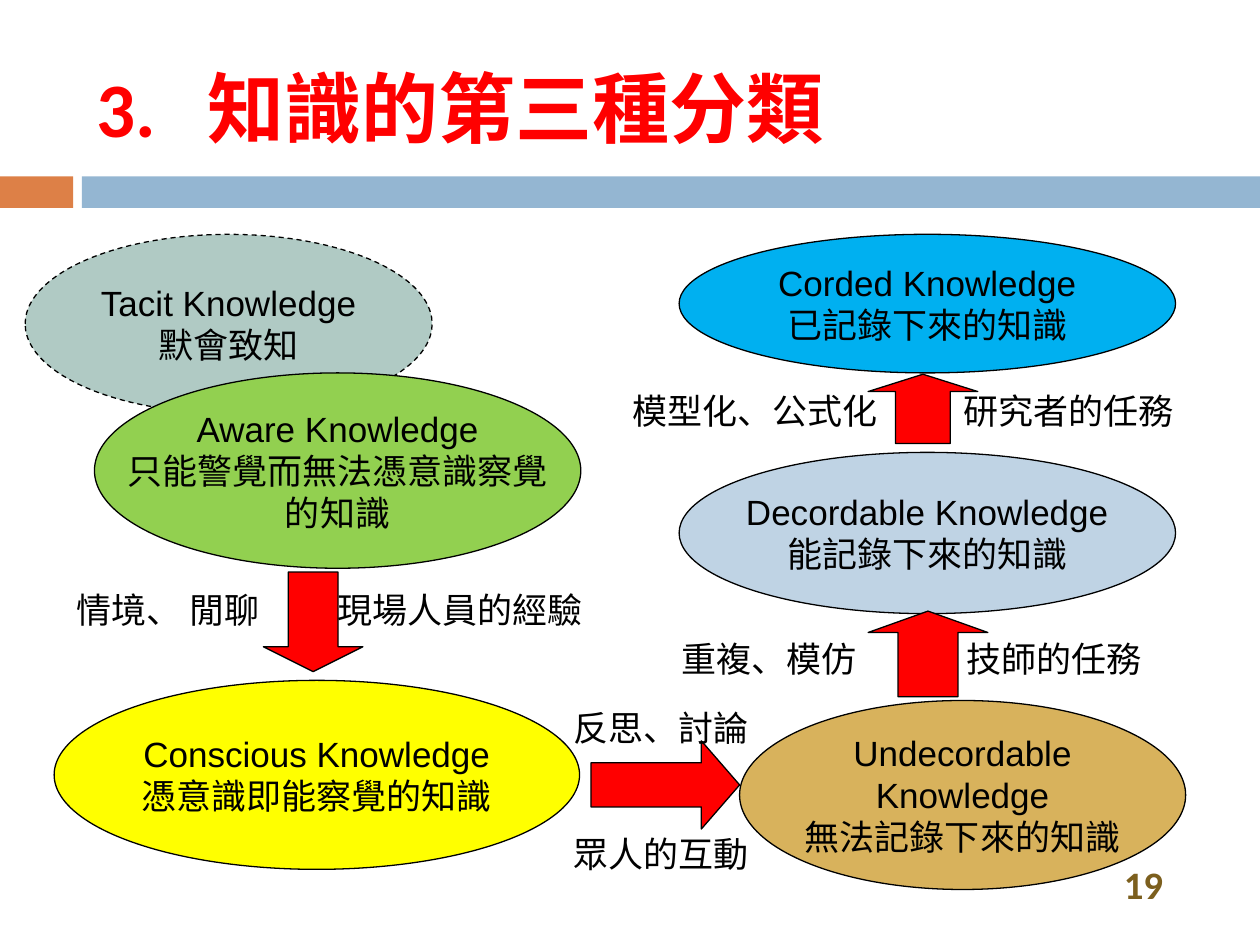
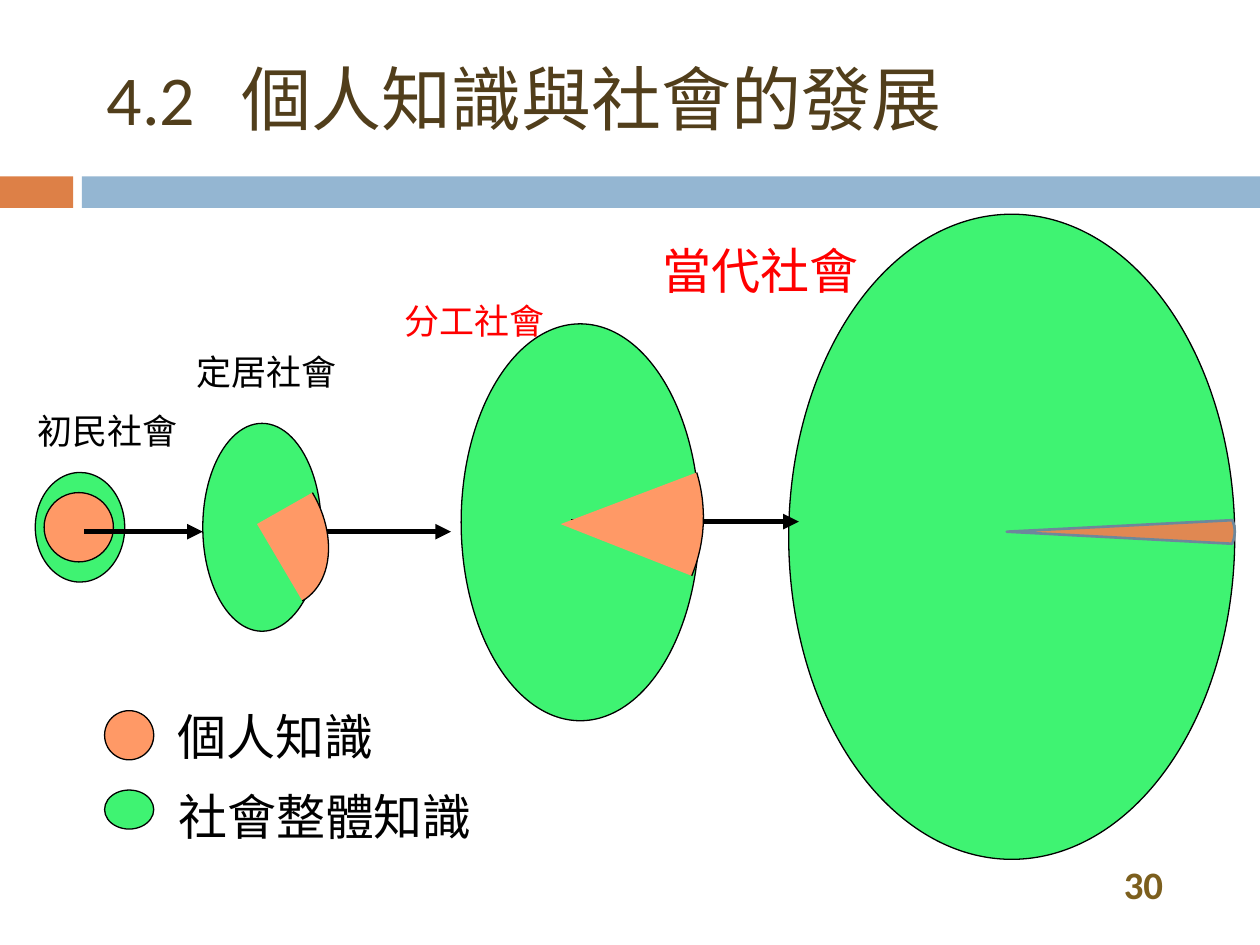
from lxml import etree
from pptx import Presentation
from pptx.dml.color import RGBColor
from pptx.enum.dml import MSO_LINE
from pptx.enum.shapes import MSO_CONNECTOR, MSO_SHAPE as Shape
from pptx.enum.text import MSO_ANCHOR as Anchor, PP_ALIGN as Align
from pptx.oxml.ns import qn
from pptx.util import Inches, Pt

# Colours and fonts
BLACK = RGBColor(0x00, 0x00, 0x00)
RED = RGBColor(0xFF, 0x00, 0x00)
ORANGE = RGBColor(0xDD, 0x80, 0x47)
BLUE = RGBColor(0x94, 0xB6, 0xD2)
BROWN = RGBColor(0x51, 0x3E, 0x1B)
PAGE_BROWN = RGBColor(0x7C, 0x5F, 0x1E)
SAGE = RGBColor(0xB0, 0xCA, 0xC4)
LEAF = RGBColor(0x92, 0xD0, 0x50)
YELLOW = RGBColor(0xFF, 0xFF, 0x00)
PALE_BLUE = RGBColor(0xBF, 0xD3, 0xE4)
SAND = RGBColor(0xD8, 0xB2, 0x5C)
SKY = RGBColor(0x00, 0xB0, 0xF0)
GREEN = RGBColor(0x3F, 0xF3, 0x72)
PEACH = RGBColor(0xFF, 0x99, 0x66)
SLICE_FILL = RGBColor(0xE0, 0x88, 0x52)
SLICE_LINE = RGBColor(0x6D, 0x87, 0x9B)
BODY_FONT, TITLE_FONT = "Arial", "Calibri"

# Shared frame: (box, colour)
BANDS = [((0, 1.4, 0.58, 0.25), ORANGE), ((0.65, 1.4, 9.35, 0.25), BLUE)]
PAGE_BOX = (8.62, 6.82, 0.71, 0.39)

# Slide 1: kinds of knowledge (box, colour, lines)
KNOWLEDGE = [
    ((0.2, 1.86, 3.23, 1.42), SAGE, ["Tacit Knowledge", "默會致知"]),
    ((0.75, 2.96, 3.86, 1.55), LEAF,
     ["Aware Knowledge", "只能警覺而無法憑意識察覺", "的知識"]),
    ((0.43, 5.4, 4.17, 1.5), YELLOW, ["Conscious Knowledge", "憑意識即能察覺的知識"]),
    ((5.39, 3.59, 3.94, 1.28), PALE_BLUE, ["Decordable Knowledge", "能記錄下來的知識"]),
    ((5.87, 5.56, 3.54, 1.5), SAND,
     ["Undecordable", "Knowledge", "無法記錄下來的知識"]),
    ((5.39, 1.86, 3.94, 1.1), SKY, ["Corded Knowledge", "已記錄下來的知識"]),
]
# (preset, box, head length)
STEP_ARROWS = [
    (Shape.DOWN_ARROW, (2.09, 4.54, 0.79, 0.79), 0.25),
    (Shape.RIGHT_ARROW, (4.69, 5.88, 1.18, 0.7), 0.434),
    (Shape.UP_ARROW, (6.89, 4.85, 0.95, 0.68), 0.25),
    (Shape.UP_ARROW, (6.89, 2.97, 0.87, 0.55), 0.25),
]
# (left, top, text)
STEP_LABELS = [
    (0.51, 4.62, "情境、 閒聊"), (2.58, 4.62, "現場人員的經驗"),
    (5.31, 5.01, "重複、模仿"), (7.57, 5.01, "技師的任務"),
    (4.45, 5.56, "反思、討論"), (4.45, 6.56, "眾人的互動"),
    (4.92, 3.04, "模型化、公式化"), (7.55, 3.04, "研究者的任務"),
]

# Slide 2: societies (ellipse box, label, label box, size, colour)
SOCIETIES = [
    ((0.28, 3.75, 0.71, 0.87), "初民社會", (0.2, 3.2, 1.31, 0.43), 20, BLACK),
    ((1.61, 3.36, 0.94, 1.65), "定居社會", (1.46, 2.73, 1.31, 0.43), 20, BLACK),
    ((3.66, 2.57, 1.89, 3.15), "分工社會", (3.11, 2.33, 1.31, 0.43), 20, RED),
    ((6.26, 1.7, 3.54, 5.12), "當代社會", (5.16, 1.86, 1.77, 0.57), 28, RED),
]
PERSONAL_CIRCLE = (0.35, 3.91, 0.55, 0.55)
# (start x, end x, y)
TIMELINE = [(0.67, 1.61, 4.22), (2.09, 3.58, 4.22), (4.53, 6.34, 4.14)]
# (tip, four control points of the outer curve)
WEDGES = [
    ((4.45, 4.16), [(5.53, 3.75), (5.61, 4.02), (5.6, 4.3), (5.49, 4.57)]),
    ((2.04, 4.16), [(2.48, 3.91), (2.68, 4.25), (2.64, 4.63), (2.4, 4.77)]),
]
SLICE_BOX, SLICE_ANGLES = (6.18, 3.59, 3.62, 1.26), (357.09, 3.07)
# (marker box, colour, text, text box)
LEGEND = [
    ((0.83, 5.64, 0.39, 0.39), PEACH, "個人知識", (1.3, 5.56, 1.77, 0.57)),
    ((0.83, 6.27, 0.39, 0.31), GREEN, "社會整體知識", (1.3, 6.19, 2.56, 0.57)),
]


def inches(box):
    return [Inches(value) for value in box]


def write(shape, lines, size, color=BLACK, font=BODY_FONT, bold=False,
          align=Align.LEFT, anchor=Anchor.TOP, wrap=False):
    frame = shape.text_frame
    frame.text = "\n".join(lines)
    frame.word_wrap = wrap
    frame.vertical_anchor = anchor
    for paragraph in frame.paragraphs:
        paragraph.alignment = align
        for run in paragraph.runs:
            run.font.size = Pt(size)
            run.font.name = font
            run.font.bold = bold
            run.font.color.rgb = color


def add_text(slide, box, text, size, **style):
    shape = slide.shapes.add_textbox(*inches(box))
    write(shape, [text], size, **style)
    return shape


def paint(shape, fill=None, line=None, width=0.75):
    shape.shadow.inherit = False
    if fill is None:
        shape.fill.background()
    else:
        shape.fill.solid()
        shape.fill.fore_color.rgb = fill
    if line is None:
        shape.line.fill.background()
    else:
        shape.line.color.rgb = line
        shape.line.width = Pt(width)
    return shape


def add_shape(slide, preset, box, fill, line=BLACK, width=0.75):
    return paint(slide.shapes.add_shape(preset, *inches(box)), fill, line, width)


def add_arrow(slide, start, end, y):
    connector = slide.shapes.add_connector(
        MSO_CONNECTOR.STRAIGHT, *inches((start, y, end, y)))
    connector.line.color.rgb = BLACK
    connector.line.width = Pt(3)
    properties = connector._element.spPr
    line = properties.find(qn("a:ln"))
    etree.SubElement(line, qn("a:tailEnd"), type="triangle")
    etree.SubElement(properties, qn("a:effectLst"))


def curve_points(controls, steps=24):
    """Points along a cubic curve."""
    points = []
    for step in range(steps + 1):
        t = step / steps
        weights = ((1 - t) ** 3, 3 * t * (1 - t) ** 2, 3 * t * t * (1 - t), t ** 3)
        points.append(tuple(sum(w * point[axis] for w, point in zip(weights, controls))
                            for axis in (0, 1)))
    return points


def add_outline(slide, points, close, fill=None, line=None):
    points = [inches(point) for point in points]
    builder = slide.shapes.build_freeform(*points[0])
    builder.add_line_segments(points[1:], close=close)
    return paint(builder.convert_to_shape(), fill, line)


def new_slide(presentation, number, title, box, size, tab, page, color, bold=False):
    """Blank slide with the bands, a tabbed title and the page number."""
    slide = presentation.slides.add_slide(presentation.slide_layouts[6])
    for band_box, band_color in BANDS:
        add_shape(slide, Shape.RECTANGLE, band_box, band_color, line=None)
    heading = add_text(slide, box, f"{number}\t{title}", size, color=color,
                       font=TITLE_FONT, bold=bold, anchor=Anchor.MIDDLE, wrap=True)
    properties = heading.text_frame.paragraphs[0]._p.get_or_add_pPr()
    tabs = etree.SubElement(properties, qn("a:tabLst"))
    etree.SubElement(tabs, qn("a:tab"), pos=str(Inches(tab)), algn="l")
    add_text(slide, PAGE_BOX, page, 22.2, color=PAGE_BROWN, font=TITLE_FONT,
             bold=True, align=Align.RIGHT, anchor=Anchor.MIDDLE, wrap=True)
    return slide


def build_knowledge_slide(presentation):
    slide = new_slide(presentation, "3.", "知識的第三種分類", (0.67, 0.36, 8.92, 0.97),
                      44, 0.88, "19", RED, bold=True)
    for index, (box, color, lines) in enumerate(KNOWLEDGE):
        ellipse = add_shape(slide, Shape.OVAL, box, color)
        write(ellipse, lines, 20, align=Align.CENTER, anchor=Anchor.MIDDLE)
        if index == 0:
            ellipse.line.dash_style = MSO_LINE.DASH
    for preset, box, head in STEP_ARROWS:
        arrow = add_shape(slide, preset, box, RED)
        arrow.adjustments[0] = 0.5
        arrow.adjustments[1] = head
    for left, top, text in STEP_LABELS:
        width = 0.28 * len(text) + 0.2
        add_text(slide, (left, top, width, 0.44), text, 20)


def build_society_slide(presentation):
    slide = new_slide(presentation, "4.2", "個人知識與社會的發展", (0.75, 0.21, 9, 1.12),
                      40, 1.07, "30", BROWN)
    # Whole-society knowledge
    for box, *_ in SOCIETIES:
        add_shape(slide, Shape.OVAL, box, GREEN)
    add_shape(slide, Shape.OVAL, PERSONAL_CIRCLE, PEACH)
    for start, end, y in TIMELINE:
        add_arrow(slide, start, end, y)
    for _, text, box, size, color in SOCIETIES:
        add_text(slide, box, text, size, color=color)
    # Personal share: only the outer curve is stroked
    for tip, controls in WEDGES:
        rim = curve_points(controls)
        add_outline(slide, [*rim, tip], True, fill=PEACH)
        add_outline(slide, rim, False, line=BLACK)
    pie = add_shape(slide, Shape.PIE, SLICE_BOX, SLICE_FILL, SLICE_LINE, 1.5)
    for index, angle in enumerate(SLICE_ANGLES):
        pie.adjustments[index] = angle * 60000 / 100000
    # Legend
    for marker_box, color, text, text_box in LEGEND:
        add_shape(slide, Shape.OVAL, marker_box, color)
        add_text(slide, text_box, text, 28, align=Align.CENTER)


def main():
    presentation = Presentation()
    presentation.slide_width = Inches(10)
    presentation.slide_height = Inches(7.5)
    build_knowledge_slide(presentation)
    build_society_slide(presentation)
    presentation.save("out.pptx")


if __name__ == "__main__":
    main()
